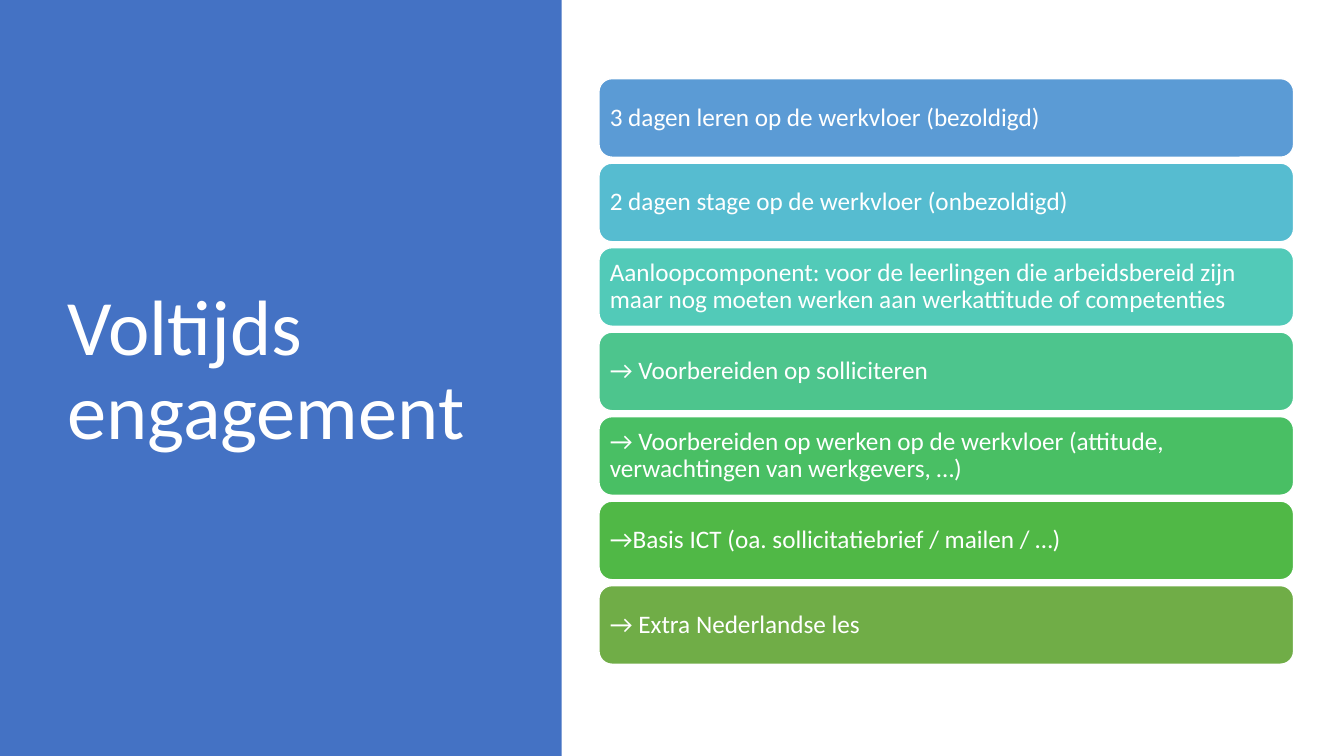
import pptx
import pptx.util
import pptx.dml.color
import pptx.enum.shapes
import pptx.enum.text

Inches = pptx.util.Inches
Kind = pptx.enum.shapes.MSO_SHAPE


def color(code):
    return pptx.dml.color.RGBColor.from_string(code)


def assign(target, values):
    for name, value in values.items():
        setattr(target, name, value)


class Deck:
    font = "Calibri"
    white = "FFFFFF"

    def __init__(self, width, height):
        self.file = pptx.Presentation()
        assign(self.file, {"slide_width": Inches(width), "slide_height": Inches(height)})
        self.slide = self.file.slides.add_slide(self.file.slide_layouts[6])

    def label(self, shape, text, size, side, edge):
        frame = shape.text_frame
        assign(frame, {
            "word_wrap": True,
            "vertical_anchor": pptx.enum.text.MSO_ANCHOR.MIDDLE,
            "margin_left": Inches(side), "margin_right": Inches(side),
            "margin_top": Inches(edge), "margin_bottom": Inches(edge),
        })
        para = frame.paragraphs[0]
        assign(para, {"alignment": pptx.enum.text.PP_ALIGN.LEFT, "line_spacing": 0.9})
        run = para.add_run()
        run.text = text
        assign(run.font, {"name": self.font, "size": pptx.util.Pt(size)})
        run.font.color.rgb = color(self.white)

    def panel(self, box, fill, kind=Kind.RECTANGLE):
        shape = self.slide.shapes.add_shape(kind, *map(Inches, box))
        shape.shadow.inherit = False
        shape.fill.solid()
        shape.fill.fore_color.rgb = color(fill)
        shape.line.fill.background()
        return shape

    def title(self, box, text):
        shape = self.slide.shapes.add_textbox(*map(Inches, box))
        self.label(shape, text, 56, 0.1, 0.05)

    def bar(self, box, fill, text):
        shape = self.panel(box, fill, Kind.ROUNDED_RECTANGLE)
        shape.line.color.rgb = color(self.white)
        shape.line.width = pptx.util.Pt(1)
        self.label(shape, text, 18, 0.07, 0.07)


BARS = [
    ("5B9BD5", "3 dagen leren op de werkvloer (bezoldigd)"),
    ("56BCD0", "2 dagen stage op de werkvloer (onbezoldigd)"),
    ("52CAB8", "Aanloopcomponent: voor de leerlingen die arbeidsbereid zijn "
               "maar nog moeten werken aan werkattitude of competenties"),
    ("4DC58D", "→ Voorbereiden op solliciteren"),
    ("49BF64", "→ Voorbereiden op werken op de werkvloer (attitude, "
               "verwachtingen van werkgevers, …)"),
    ("50B846", "→Basis ICT (oa. sollicitatiebrief / mailen / …)"),
    ("70AD47", "→ Extra Nederlandse les"),
]


def main():
    deck = Deck(13.33, 7.5)
    deck.panel((0, 0, 5.57, 7.5), "4472C4")
    deck.title((0.57, 0.68, 4.16, 6.02), "Voltijds engagement")
    first, last = 0.78, 5.81
    step = (last - first) / (len(BARS) - 1)
    for row, (fill, text) in enumerate(BARS):
        deck.bar((5.94, first + row * step, 6.89, 0.78), fill, text)
    deck.file.save("out.pptx")


if __name__ == "__main__":
    main()
